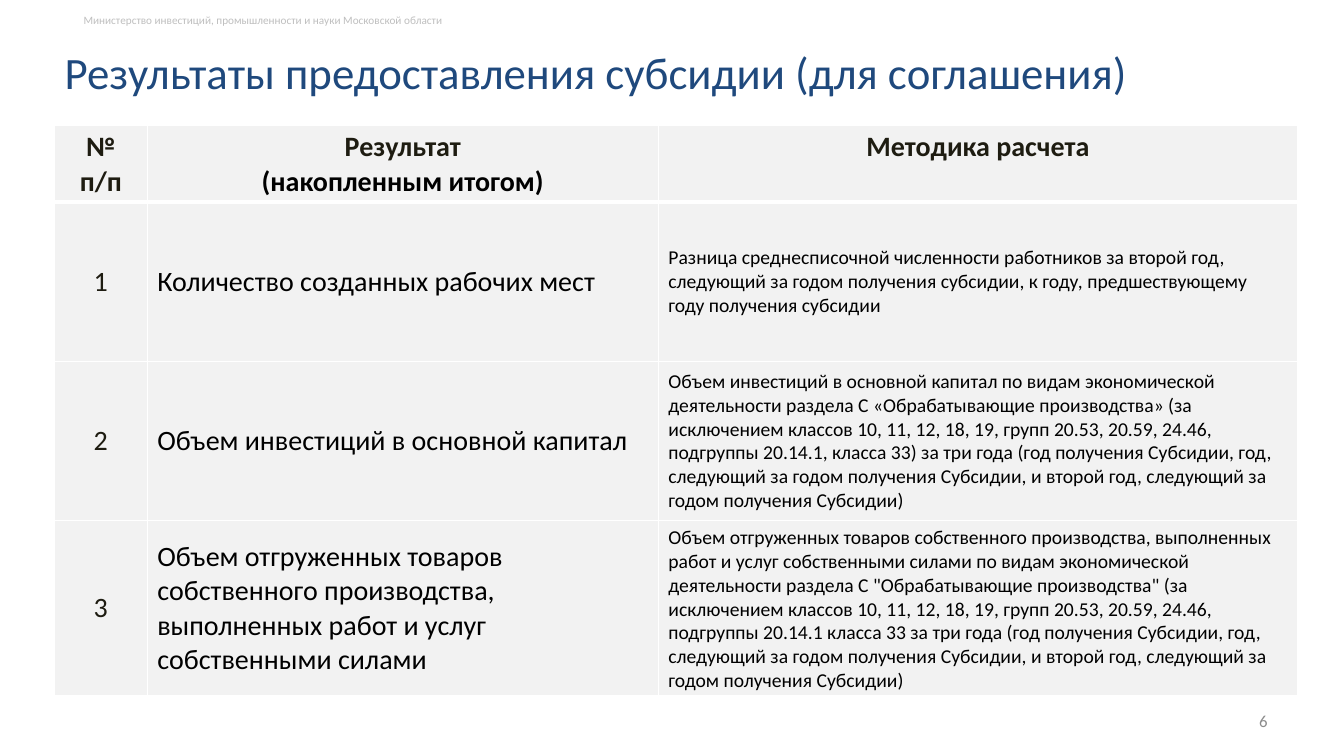
from lxml.etree import SubElement
from pptx import Presentation
from pptx.dml.color import RGBColor
from pptx.enum.text import MSO_ANCHOR as Anchor, MSO_AUTO_SIZE as AutoSize, PP_ALIGN as Align
from pptx.oxml.ns import qn
from pptx.util import Inches, Pt

COLORS = {
    "title": "1F497D",
    "ministry": "BFBFBF",
    "page": "8C8C8C",
    "dark": "1E1C11",
    "black": "000000",
    "cell": "F2F2F2",
    "border": "FFFFFF",
}


def write(frame, text, size=20, color="black", bold=False, align=Align.LEFT, anchor=Anchor.TOP):
    """Fill a text frame, one paragraph per line of text."""
    frame.word_wrap = True
    frame.vertical_anchor = anchor
    for index, line in enumerate(text.split("\n")):
        paragraph = frame.paragraphs[0] if index == 0 else frame.add_paragraph()
        paragraph.alignment = align
        run = paragraph.add_run()
        run.text = line
        run.font.name = "Calibri"
        run.font.size = Pt(size)
        run.font.bold = bold
        run.font.color.rgb = RGBColor.from_string(COLORS[color])


def set_borders(cell, **widths):
    """Draw the cell's borders; widths in points, keyed by side."""
    properties = cell._tc.get_or_add_tcPr()
    for position, side in enumerate(("L", "R", "T", "B")):
        line = properties.makeelement(qn(f"a:ln{side}"), {"w": str(Pt(widths.get(side, 1)))})
        fill = SubElement(line, qn("a:solidFill"))
        SubElement(fill, qn("a:srgbClr"), val=COLORS["border"])
        properties.insert(position, line)


prs = Presentation()
prs.slide_width, prs.slide_height = Inches(13.33), Inches(7.5)
slide = prs.slides.add_slide(prs.slide_layouts[5])

# Title
title = slide.shapes.title
title.left, title.top, title.width, title.height = map(Inches, (0.54, 0.39, 12.73, 0.64))
write(title.text_frame, "Результаты предоставления субсидии (для соглашения)", size=32, color="title")
title.text_frame.auto_size = AutoSize.NONE

# Ministry line and page number
ministry = slide.shapes.add_textbox(Inches(0.73), Inches(0.08), Inches(5.65), Inches(0.24))
write(ministry.text_frame, "Министерство инвестиций, промышленности и науки Московской области",
      size=8, color="ministry")
page = slide.shapes.add_textbox(Inches(9.56), Inches(6.95), Inches(3.11), Inches(0.4))
write(page.text_frame, "6", size=12, color="page", align=Align.RIGHT, anchor=Anchor.MIDDLE)

# Table of results
headers = [("№ п/п", "dark"), ("Результат\n(накопленным итогом)", "dark"), ("Методика расчета", "dark")]
results = [
    ("Количество созданных рабочих мест",
     "Разница среднесписочной численности работников за второй год, следующий за годом "
     "получения субсидии, к году, предшествующему году получения субсидии"),
    ("Объем инвестиций в основной капитал",
     "Объем инвестиций в основной капитал по видам экономической деятельности раздела C "
     "«Обрабатывающие производства» (за исключением классов 10, 11, 12, 18, 19, групп 20.53, "
     "20.59, 24.46, подгруппы 20.14.1, класса 33) за три года (год получения Субсидии, год, "
     "следующий за годом получения Субсидии, и второй год, следующий за годом получения Субсидии)"),
    ("Объем отгруженных товаров собственного производства, выполненных работ и услуг "
     "собственными силами",
     "Объем отгруженных товаров собственного производства, выполненных работ и услуг "
     "собственными силами по видам экономической деятельности раздела C "
     "\"Обрабатывающие производства\" (за исключением классов 10, 11, 12, 18, 19, групп 20.53, "
     "20.59, 24.46, подгруппы 20.14.1 класса 33 за три года (год получения Субсидии, год, "
     "следующий за годом получения Субсидии, и второй год, следующий за годом получения Субсидии)"),
]
table = slide.shapes.add_table(len(results) + 1, len(headers), Inches(0.54), Inches(1.24),
                               Inches(12.33), Inches(5.41)).table
table.horz_banding = False
for column, width in zip(table.columns, (0.92, 5.07, 6.34)):
    column.width = Inches(width)
for row, height in zip(table.rows, (0.67, 1.58, 1.58, 1.58)):
    row.height = Inches(height)

# Header row
for column, (header, color) in enumerate(headers):
    write(table.cell(0, column).text_frame, header, color=color, bold=True, align=Align.CENTER)
table.cell(0, 1).text_frame.paragraphs[1].runs[0].font.color.rgb = RGBColor.from_string(COLORS["black"])

# Result rows
for number, (result, method) in enumerate(results, start=1):
    order_cell, result_cell, method_cell = table.rows[number].cells
    write(order_cell.text_frame, str(number), color="dark", align=Align.CENTER)
    write(result_cell.text_frame, result)
    write(method_cell.text_frame, method, size=14)
    for cell in (order_cell, result_cell, method_cell):
        cell.vertical_anchor = Anchor.MIDDLE

# Cell fills and borders, with a thick rule under the header
rule_sides = {0: {"B": 3}, 1: {"T": 3}}
for index, row in enumerate(table.rows):
    for cell in row.cells:
        cell.fill.solid()
        cell.fill.fore_color.rgb = RGBColor.from_string(COLORS["cell"])
        set_borders(cell, **rule_sides.get(index, {}))

prs.save("out.pptx")
